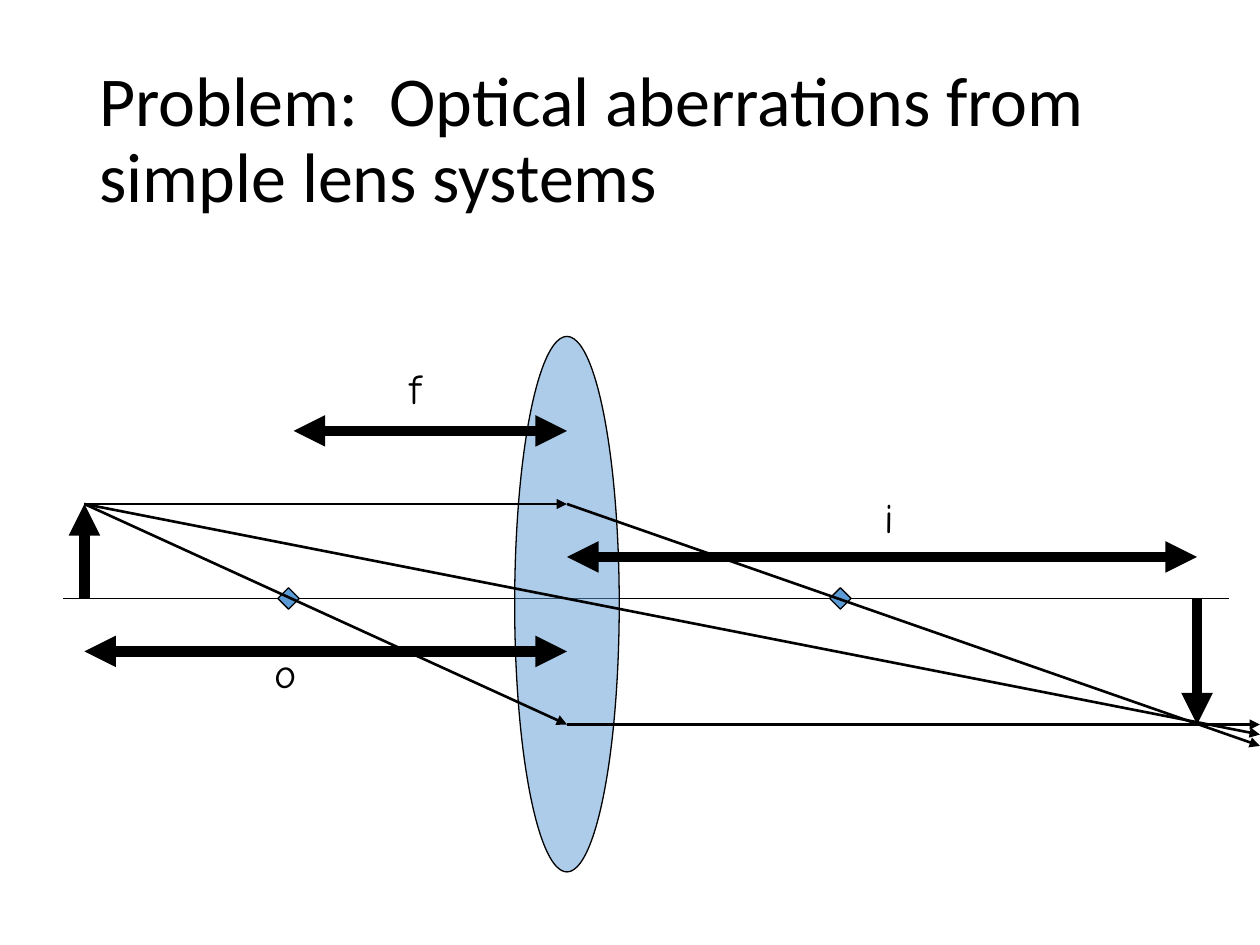
import pptx
import pptx.util
from pptx.dml.color import RGBColor
from pptx.enum.shapes import MSO_CONNECTOR, MSO_SHAPE
from pptx.enum.text import MSO_ANCHOR, MSO_AUTO_SIZE, PP_ALIGN
from pptx.oxml.ns import qn
from pptx.oxml.xmlchemy import OxmlElement
from pptx.util import Inches

COLORS = {"ink": "000000", "glass": "5B9BD5"}
TITLE_FONT = "Calibri"
LABEL_FONT = "Comic Neue"


def color(name):
    return RGBColor.from_string(COLORS[name])


def add_line(slide, start, end, weight, arrows=()):
    """Draw a straight line; arrows names the ends that carry a head."""
    connector = slide.shapes.add_connector(
        MSO_CONNECTOR.STRAIGHT, *map(Inches, (*start, *end)))
    connector.line.color.rgb = color("ink")
    connector.line.width = pptx.util.Pt(weight)
    properties = connector._element.spPr
    outline = properties.find(qn("a:ln"))
    for arrow in arrows:
        arrowhead = OxmlElement(f"a:{arrow}")
        arrowhead.set("type", "triangle")
        outline.append(arrowhead)
    properties.append(OxmlElement("a:effectLst"))


def add_glass(slide, preset, center, width, height, opacity=100):
    """Draw an outlined blue shape around its center."""
    x, y = center
    shape = slide.shapes.add_shape(
        preset, Inches(x - width / 2), Inches(y - height / 2),
        Inches(width), Inches(height))
    shape.shadow.inherit = False
    shape.fill.solid()
    shape.fill.fore_color.rgb = color("glass")
    shape.line.color.rgb = color("ink")
    shape.line.width = pptx.util.Pt(0.75)
    if opacity < 100:
        alpha = OxmlElement("a:alpha")
        alpha.set("val", str(opacity * 1000))
        fill = shape._element.spPr.find(qn("a:solidFill"))
        fill.find(qn("a:srgbClr")).append(alpha)


def add_label(slide, text, position, width):
    box = slide.shapes.add_textbox(*map(Inches, (*position, width, 0.57)))
    frame = box.text_frame
    frame.word_wrap = False
    frame.auto_size = MSO_AUTO_SIZE.SHAPE_TO_FIT_TEXT
    paragraph = frame.paragraphs[0]
    paragraph.text = text
    paragraph.font.name = LABEL_FONT
    paragraph.font.size = pptx.util.Pt(24)
    paragraph.font.color.rgb = color("ink")


def format_title(slide, left, top, width, height):
    title = slide.shapes.title
    title.left, title.top = Inches(left), Inches(top)
    title.width, title.height = Inches(width), Inches(height)
    frame = title.text_frame
    frame.text = "Problem:  Optical aberrations from simple lens systems"
    frame.word_wrap = True
    frame.auto_size = MSO_AUTO_SIZE.NONE
    frame.vertical_anchor = MSO_ANCHOR.MIDDLE
    paragraph = frame.paragraphs[0]
    paragraph.alignment = PP_ALIGN.LEFT
    paragraph.line_spacing = 0.9
    paragraph.font.name = TITLE_FONT
    paragraph.font.size = pptx.util.Pt(40)
    paragraph.font.color.rgb = color("ink")


def draw_ray_diagram(slide, left, top, width, height):
    """Lay out the lens, rays and distances around the lens on the axis."""
    lens_x, axis_y = left + 4, top + 2.08
    right_edge = width - 4
    object_x, object_y = -3.83, -0.75
    image_x, image_y = 5, 1

    def at(x, y):
        return lens_x + x, axis_y + y

    add_line(slide, at(-4, 0), at(5.25, 0), 0.75)
    add_glass(slide, MSO_SHAPE.OVAL, (lens_x, top + height / 2),
              0.83, height, opacity=50)

    object_tip = at(object_x, object_y)
    rays = [
        (object_tip, at(right_edge, 1.08)),
        (object_tip, at(0, object_y)),
        (at(0, object_y), at(right_edge, 1.17)),
        (object_tip, at(0, image_y)),
        (at(0, image_y), at(right_edge, image_y)),
    ]
    add_line(slide, *rays[0], 1.5, ["tailEnd"])
    for focus_x in (2.17, -2.21):
        add_glass(slide, MSO_SHAPE.DIAMOND, at(focus_x, 0), 0.17, 0.17)
    add_line(slide, at(object_x, 0), object_tip, 6, ["tailEnd"])
    for start, end in rays[1:]:
        add_line(slide, start, end, 1.5, ["tailEnd"])
    add_line(slide, at(image_x, 0), at(image_x, image_y), 6, ["tailEnd"])

    distances = [
        ("f", -2.17, 0, -1.33, (-1.35, -1.92), 0.37),
        ("i", 0, image_x, -0.33, (2.42, -0.9), 0.3),
        ("o", 0, object_x, 0.42, (-2.42, 0.33), 0.38),
    ]
    for _, start_x, end_x, y, _, _ in distances:
        add_line(slide, at(start_x, y), at(end_x, y), 6,
                 ["headEnd", "tailEnd"])
    for text, _, _, _, position, label_width in distances:
        add_label(slide, text, at(*position), label_width)


def main():
    presentation = pptx.Presentation()
    presentation.slide_width = Inches(10)
    presentation.slide_height = Inches(7.5)
    slide = presentation.slides.add_slide(presentation.slide_layouts[5])
    format_title(slide, 0.69, 0.4, 8.62, 1.45)
    draw_ray_diagram(slide, 0.5, 2.67, 9.5, 4.25)
    presentation.save("out.pptx")


if __name__ == "__main__":
    main()
